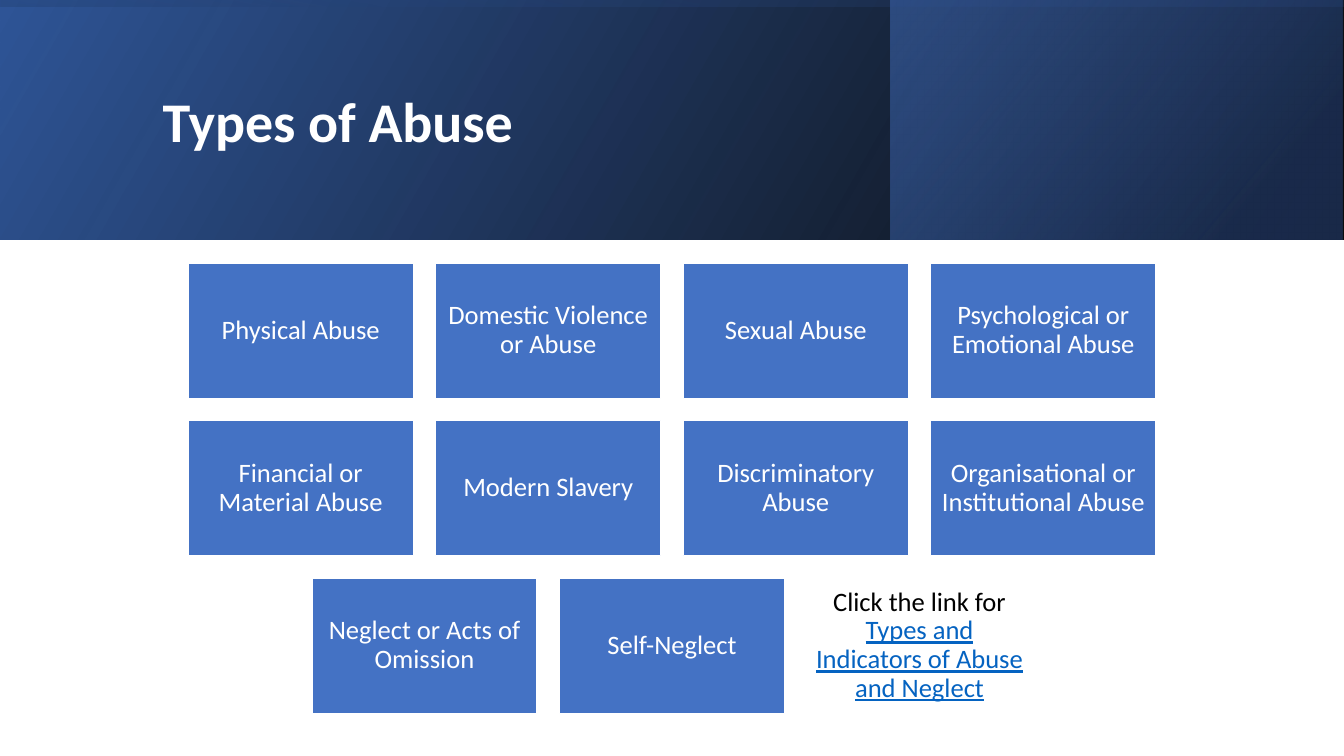
import pptx
import pptx.util
import pptx.dml.color
import pptx.enum.shapes
import pptx.enum.text
import pptx.oxml
import pptx.oxml.ns

Pt = pptx.util.Pt
RGBColor = pptx.dml.color.RGBColor
ALIGN = pptx.enum.text.PP_ALIGN
RECTANGLE = pptx.enum.shapes.MSO_SHAPE.RECTANGLE

WHITE = RGBColor(0xFF, 0xFF, 0xFF)
BLACK = RGBColor(0x00, 0x00, 0x00)
BLUE = RGBColor(0x44, 0x72, 0xC4)
DEEP_BLUE = RGBColor(0x2F, 0x55, 0x97)
NAVY = RGBColor(0x20, 0x38, 0x64)
LINK_BLUE = RGBColor(0x05, 0x63, 0xC1)

PAGE_WIDTH, PAGE_HEIGHT = 960, 540
BANNER_HEIGHT = 171
CARD_WIDTH, CARD_HEIGHT, CARD_GAP = 160.8, 96.5, 16
CARDS_TOP = 188

CARD_ROWS = [
    ["Physical Abuse", "Domestic Violence or Abuse", "Sexual Abuse",
     "Psychological or Emotional Abuse"],
    ["Financial or Material Abuse", "Modern Slavery", "Discriminatory Abuse",
     "Organisational or Institutional Abuse"],
    ["Neglect or Acts of Omission", "Self-Neglect", None],
]


def add_rectangle(page, left, top, width, height):
    box = page.shapes.add_shape(RECTANGLE, Pt(left), Pt(top), Pt(width), Pt(height))
    box.shadow.inherit = False
    return box


def add_gradient_panel(page, left, top, width, height, stops, angle, rotation=0):
    """Add a mirrored panel; stops are (position, colour, opacity), all in percent."""
    panel = add_rectangle(page, left, top, width, height)
    panel.line.fill.background()
    panel.rotation = rotation
    properties = panel.element.spPr
    properties.find(pptx.oxml.ns.qn("a:xfrm")).set("flipH", "1")
    panel.fill.gradient()
    panel.fill.gradient_angle = 360 - angle  # the property counts anticlockwise
    for stop, (position, colour, _) in zip(panel.fill.gradient_stops, stops):
        stop.position = position / 100
        stop.color.rgb = colour
    colours = list(properties.iter(pptx.oxml.ns.qn("a:srgbClr")))
    for element, (_, _, opacity) in zip(colours, stops):
        element.append(pptx.oxml.parse_xml(
            f'<a:alpha {pptx.oxml.ns.nsdecls("a")} val="{opacity * 1000}"/>'))


def add_span(para, text, size, colour, bold=False, underline=False):
    span = para.add_run()
    span.text = text
    span.font.name = "Calibri"
    span.font.size = Pt(size)
    span.font.color.rgb = colour
    span.font.bold = bold
    span.font.underline = underline


def add_title(page, text):
    title = page.shapes.title
    title.left, title.top, title.width, title.height = Pt(109), Pt(27), Pt(765), Pt(124)
    title.text_frame.vertical_anchor = pptx.enum.text.MSO_ANCHOR.MIDDLE
    para = title.text_frame.paragraphs[0]
    para.alignment = ALIGN.LEFT
    para.line_spacing = 0.9
    add_span(para, text, 40, WHITE, bold=True)


def add_card(page, left, top):
    """Add an empty card and return it with its paragraph."""
    card = add_rectangle(page, left, top, CARD_WIDTH, CARD_HEIGHT)
    card.line.color.rgb = WHITE
    card.line.width = Pt(1)
    frame = card.text_frame
    frame.word_wrap = True
    frame.vertical_anchor = pptx.enum.text.MSO_ANCHOR.MIDDLE
    frame.margin_left = frame.margin_right = Pt(5.7)
    frame.margin_top = frame.margin_bottom = Pt(5.7)
    para = frame.paragraphs[0]
    para.alignment = ALIGN.CENTER
    para.line_spacing = 0.9
    return card, para


def add_abuse_card(page, left, top, text):
    card, para = add_card(page, left, top)
    card.fill.solid()
    card.fill.fore_color.rgb = BLUE
    add_span(para, text, 19, WHITE)


def add_link_card(page, left, top):
    card, para = add_card(page, left, top)
    card.fill.background()
    add_span(para, "Click the link for ", 19, BLACK)
    add_span(para, "Types and Indicators of Abuse and Neglect", 19, LINK_BLUE,
             underline=True)


def add_card_grid(page):
    """Lay out the rows of cards, each row centred on the page."""
    for row, labels in enumerate(CARD_ROWS):
        row_width = len(labels) * (CARD_WIDTH + CARD_GAP) - CARD_GAP
        top = CARDS_TOP + row * (CARD_HEIGHT + CARD_GAP)
        for column, label in enumerate(labels):
            left = (PAGE_WIDTH - row_width) / 2 + column * (CARD_WIDTH + CARD_GAP)
            if label:
                add_abuse_card(page, left, top, label)
            else:
                add_link_card(page, left, top)


def add_banner(page):
    add_gradient_panel(page, 0, 0, PAGE_WIDTH, BANNER_HEIGHT,
                       [(0, BLACK, 96), (100, DEEP_BLUE, 100)], 330)
    add_gradient_panel(page, 636, 0, 323, BANNER_HEIGHT,
                       [(19, NAVY, 68), (100, BLUE, 48)], 320)
    # An upright panel turned on its side to cover the whole banner.
    offset = (PAGE_WIDTH - BANNER_HEIGHT) / 2
    add_gradient_panel(page, offset, -offset, BANNER_HEIGHT, PAGE_WIDTH,
                       [(23, DEEP_BLUE, 16), (99, BLACK, 45)], 350, rotation=270)


def main():
    deck = pptx.Presentation()
    deck.slide_width, deck.slide_height = Pt(PAGE_WIDTH), Pt(PAGE_HEIGHT)
    page = deck.slides.add_slide(deck.slide_layouts[5])
    add_banner(page)
    add_title(page, "Types of Abuse")
    # The title goes in front of the banner panels.
    page.shapes.element.append(page.shapes.title.element)
    add_card_grid(page)
    deck.save("out.pptx")


if __name__ == "__main__":
    main()
